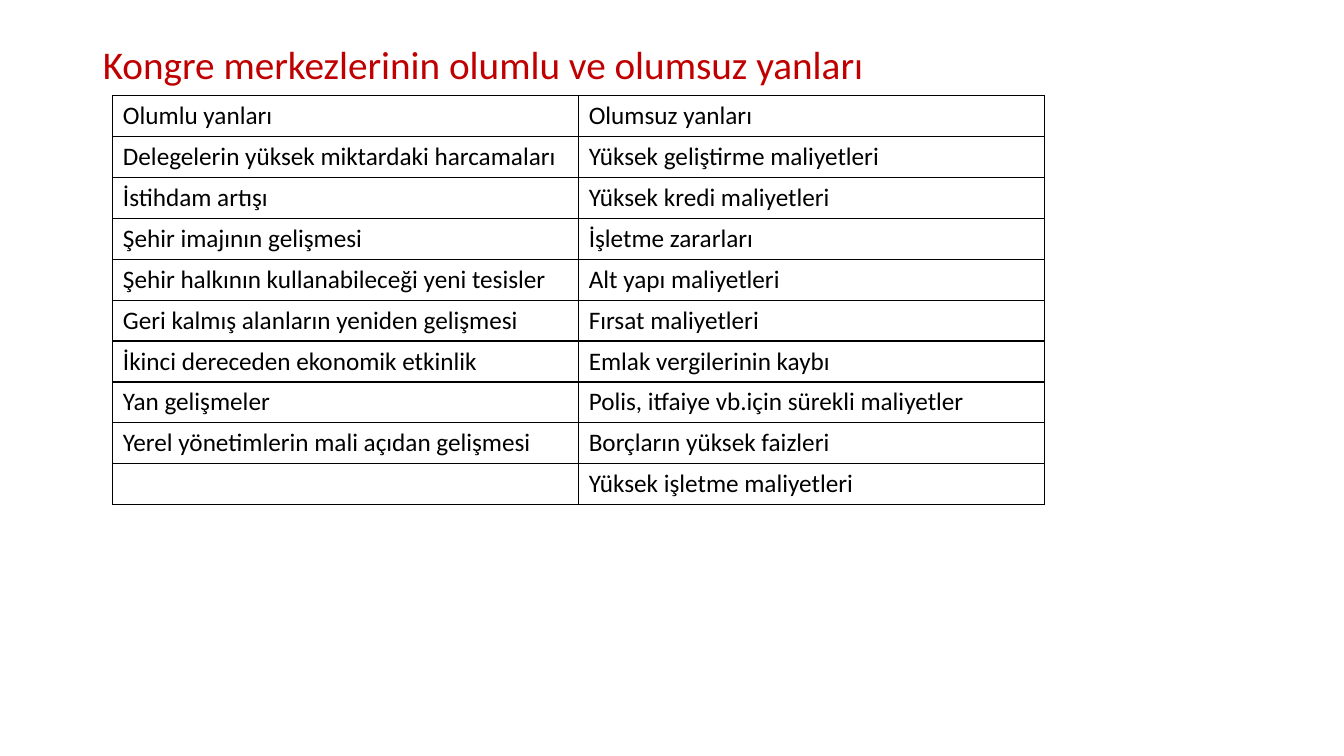
from dataclasses import dataclass

from lxml import etree
from pptx import Presentation
from pptx import util as u
from pptx.dml.color import RGBColor
from pptx.enum import text
from pptx.oxml import ns

WIDTH, HEIGHT = u.Inches(13.33), u.Inches(7.5)
FONT = "Calibri"
RED = RGBColor(0xC0, 0x00, 0x00)
BLACK = RGBColor(0x00, 0x00, 0x00)


@dataclass(frozen=True)
class Area:
    left: float
    top: float
    width: float
    height: float

    def box(self) -> tuple[int, int, int, int]:
        return (
            int(WIDTH * self.left / 100),
            int(HEIGHT * self.top / 100),
            int(WIDTH * self.width / 100),
            int(HEIGHT * self.height / 100),
        )


@dataclass(frozen=True)
class Comparison:
    positive: str
    negative: str


HEADING_AREA = Area(6.9, 5.33, 86.27, 84.67)
COMPARISON_AREA = Area(8.4, 12.67, 69.32, 53.33)
HEADING = "Kongre merkezlerinin olumlu ve olumsuz yanları"
COMPARISONS = [
    Comparison("Olumlu yanları", "Olumsuz yanları"),
    Comparison("Delegelerin yüksek miktardaki harcamaları", "Yüksek geliştirme maliyetleri"),
    Comparison("İstihdam artışı", "Yüksek kredi maliyetleri"),
    Comparison("Şehir imajının gelişmesi", "İşletme zararları"),
    Comparison("Şehir halkının kullanabileceği yeni tesisler", "Alt yapı maliyetleri"),
    Comparison("Geri kalmış alanların yeniden gelişmesi", "Fırsat maliyetleri"),
    Comparison("İkinci dereceden ekonomik etkinlik", "Emlak vergilerinin kaybı"),
    Comparison("Yan gelişmeler", "Polis, itfaiye vb.için sürekli maliyetler"),
    Comparison("Yerel yönetimlerin mali açıdan gelişmesi", "Borçların yüksek faizleri"),
    Comparison("", "Yüksek işletme maliyetleri"),
]


def add_run(paragraph, wording: str, size: int, color: RGBColor) -> None:
    run = paragraph.add_run()
    run.text = wording
    run.font.name = FONT
    run.font.size = u.Pt(size)
    run.font.color.rgb = color


def add_heading(slide) -> None:
    heading = slide.shapes.title
    heading.left, heading.top, heading.width, heading.height = HEADING_AREA.box()
    frame = heading.text_frame
    frame.word_wrap = True
    frame.auto_size = text.MSO_AUTO_SIZE.NONE
    frame.vertical_anchor = text.MSO_ANCHOR.TOP
    paragraph = frame.paragraphs[0]
    paragraph.alignment = text.PP_ALIGN.LEFT
    paragraph.line_spacing = 0.9
    paragraph.space_before = u.Pt(10)
    add_run(paragraph, HEADING, 28, RED)


def add_borders(cell) -> None:
    properties = cell._tc.get_or_add_tcPr()
    for side in ("a:lnL", "a:lnR", "a:lnT", "a:lnB"):
        border = etree.SubElement(properties, ns.qn(side), w=str(u.Pt(1)))
        fill = etree.SubElement(border, ns.qn("a:solidFill"))
        etree.SubElement(fill, ns.qn("a:srgbClr"), val=str(BLACK))


def add_comparisons(slide) -> None:
    table = slide.shapes.add_table(len(COMPARISONS), 2, *COMPARISON_AREA.box()).table
    table.first_row = False
    table.horz_banding = False
    for row, comparison in enumerate(COMPARISONS):
        for column, wording in enumerate((comparison.positive, comparison.negative)):
            cell = table.cell(row, column)
            add_borders(cell)
            cell.fill.background()
            if wording:
                add_run(cell.text_frame.paragraphs[0], wording, 18, BLACK)


def main() -> None:
    presentation = Presentation()
    presentation.slide_width, presentation.slide_height = WIDTH, HEIGHT
    slide = presentation.slides.add_slide(presentation.slide_layouts[5])
    add_heading(slide)
    add_comparisons(slide)
    presentation.save("out.pptx")


if __name__ == "__main__":
    main()
